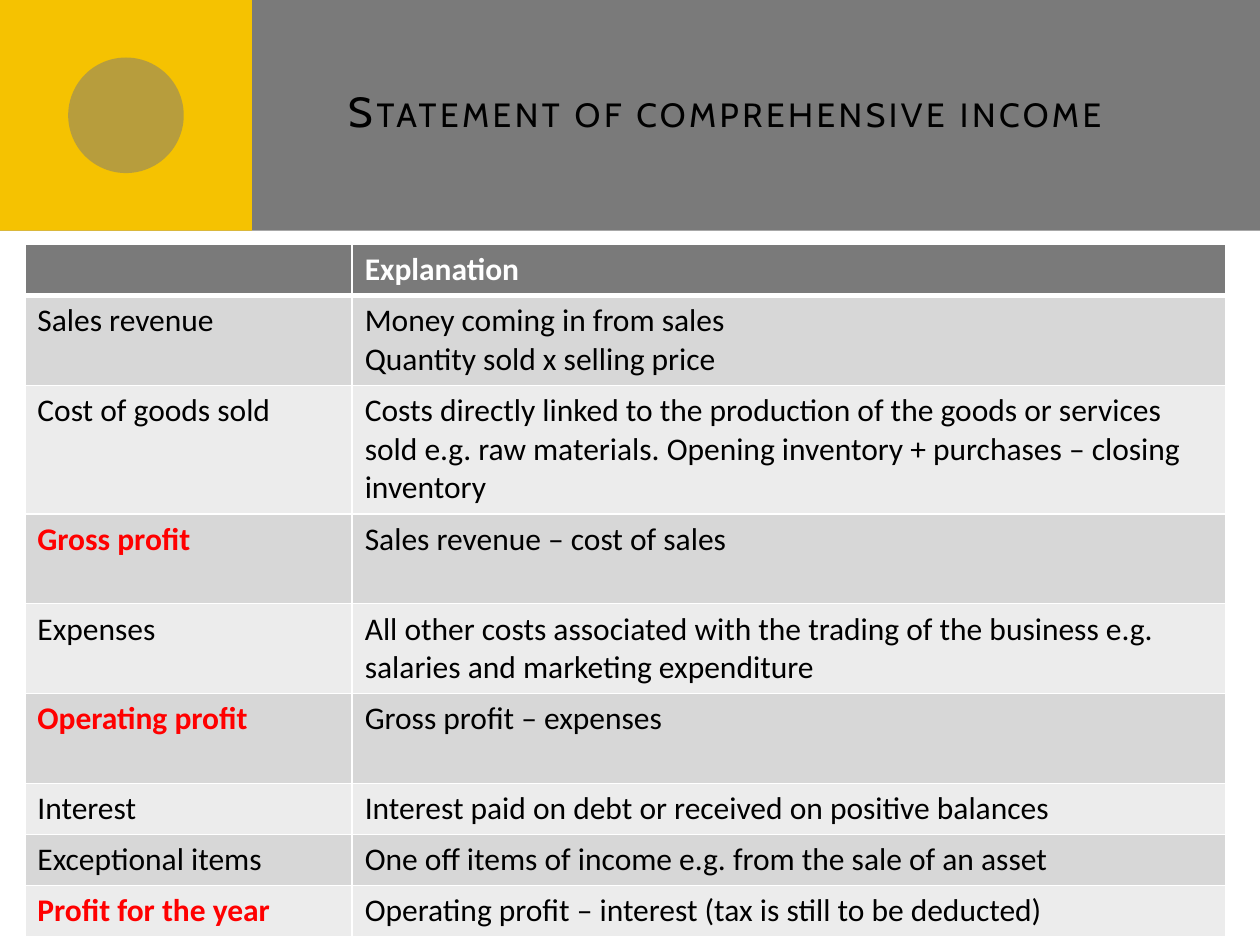
from lxml import etree
from pptx import Presentation
from pptx.dml.color import RGBColor
from pptx.enum.shapes import MSO_SHAPE
from pptx.enum.text import MSO_ANCHOR, PP_ALIGN
from pptx.oxml.ns import qn
from pptx.util import Cm, Pt

RECTANGLE, OVAL = MSO_SHAPE.RECTANGLE, MSO_SHAPE.OVAL
MIDDLE, LEFT, RIGHT = MSO_ANCHOR.MIDDLE, PP_ALIGN.LEFT, PP_ALIGN.RIGHT

GREY = RGBColor(0x7A, 0x7A, 0x7A)
YELLOW = RGBColor(0xF5, 0xC2, 0x01)
BAND_DARK = RGBColor(0xD7, 0xD7, 0xD7)
BAND_LIGHT = RGBColor(0xEC, 0xEC, 0xEC)
WHITE = RGBColor(0xFF, 0xFF, 0xFF)
BLACK = RGBColor(0, 0, 0)
RED = RGBColor(0xFF, 0, 0)

# Item, explanation, height in text lines, whether it is a profit line
STATEMENT = [
    ("Sales revenue", "Money coming in from sales\nQuantity sold x selling price", 2, False),
    ("Cost of goods sold",
     "Costs directly linked to the production of the goods or services sold "
     "e.g. raw materials. Opening inventory + purchases – closing inventory", 3, False),
    ("Gross profit", "Sales revenue – cost of sales", 2, True),
    ("Expenses",
     "All other costs associated with the trading of the business e.g. "
     "salaries and marketing expenditure", 2, False),
    ("Operating profit", "Gross profit – expenses", 2, True),
    ("Interest", "Interest paid on debt or received on positive balances", 1, False),
    ("Exceptional items", "One off items of income e.g. from the sale of an asset", 1, False),
    ("Profit for the year", "Operating profit – interest (tax is still to be deducted)", 1, True),
]


def write(frame, text, size=18, font="Calibri", color=BLACK, bold=False,
          align=LEFT, small_caps=False, spacing=0):
    """Fill a text frame, one paragraph for each line of text."""
    frame.word_wrap = True
    frame.text = text
    for paragraph in frame.paragraphs:
        paragraph.alignment = align
        for run in paragraph.runs:
            run.font.size, run.font.name = Pt(size), font
            run.font.color.rgb, run.font.bold = color, bold
            properties = run.font._element
            if small_caps:
                properties.set("cap", "small")
            if spacing:
                properties.set("spc", str(spacing * 100))


def add_block(slide, kind, left, top, width, height, color, opacity=100):
    block = slide.shapes.add_shape(kind, Cm(left), Cm(top), Cm(width), Cm(height))
    block.shadow.inherit = False
    block.line.fill.background()
    block.fill.solid()
    block.fill.fore_color.rgb = color
    if opacity < 100:
        rgb = block._element.spPr.find(qn("a:solidFill"))[0]
        etree.SubElement(rgb, qn("a:alpha"), val=str(opacity * 1000))


def add_banner(slide, left, top, width, height):
    """Grey band with a yellow corner, a translucent disc and the title."""
    corner, disc = 5.08, 2.33
    add_block(slide, RECTANGLE, left, top, width, height, GREY)
    add_block(slide, RECTANGLE, left, top, corner, height, YELLOW)
    add_block(slide, OVAL, left + (corner - disc) / 2, top + (height - disc) / 2,
              disc, disc, GREY, opacity=50)
    title = slide.shapes.add_textbox(Cm(left + 6.78), Cm(top + 0.64),
                                     Cm(width - 8.05), Cm(3.18)).text_frame
    title.vertical_anchor = MIDDLE
    write(title, "Statement of comprehensive income", size=24, font="Cabin",
          align=RIGHT, small_caps=True, spacing=2)


def set_borders(cell, bottom):
    """White rules on all sides; they must precede the fill in the XML."""
    properties = cell._tc.get_or_add_tcPr()
    for side, points in (("L", 1), ("R", 1), ("T", 1), ("B", bottom)):
        rule = etree.SubElement(properties, qn(f"a:ln{side}"), w=str(Pt(points)))
        fill = etree.SubElement(rule, qn("a:solidFill"))
        etree.SubElement(fill, qn("a:srgbClr"), val=str(WHITE))


def fill_row(cells, texts, colors, bolds, background, bottom=1):
    for cell, text, color, bold in zip(cells, texts, colors, bolds):
        set_borders(cell, bottom)
        cell.fill.solid()
        cell.fill.fore_color.rgb = background
        write(cell.text_frame, text, color=color, bold=bold)


def add_statement(slide, left, top, width):
    """Table of statement items; row heights follow the lines of text."""
    line_counts = [1] + [lines for _, _, lines, _ in STATEMENT]
    heights = [0.25 + 0.78 * lines for lines in line_counts]
    table = slide.shapes.add_table(len(heights), 2, Cm(left), Cm(top),
                                   Cm(width), Cm(sum(heights))).table
    item_width = 6.6
    table.columns[0].width = Cm(item_width)
    table.columns[1].width = Cm(width - item_width)
    for row, height in zip(table.rows, heights):
        row.height = Cm(height)

    header, *body = table.rows
    fill_row(header.cells, ("", "Explanation"), (WHITE, WHITE), (True, True), GREY, bottom=3)
    for index, (row, (item, explanation, _, is_profit)) in enumerate(zip(body, STATEMENT)):
        fill_row(row.cells, (item, explanation), (RED if is_profit else BLACK, BLACK),
                 (is_profit, False), BAND_LIGHT if index % 2 else BAND_DARK)


def main():
    deck = Presentation()
    deck.slide_width, deck.slide_height = Cm(25.4), Cm(19.05)
    slide = deck.slides.add_slide(deck.slide_layouts[6])
    add_banner(slide, 0, 0, 25.4, 4.65)
    add_statement(slide, 0.5, 4.93, 24.2)
    deck.save("out.pptx")


if __name__ == "__main__":
    main()
